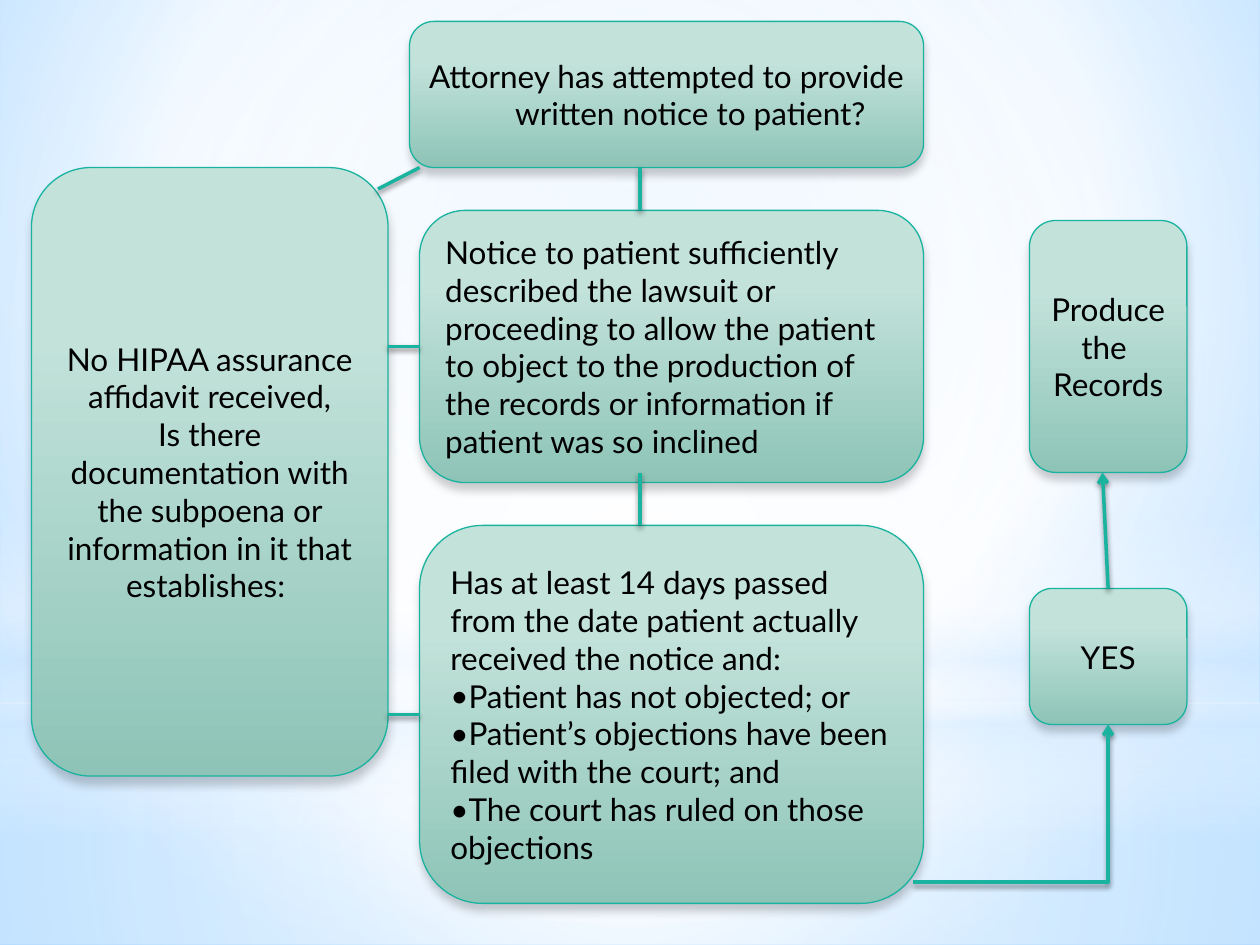
"""Build a flowchart slide on notice to patients before records are produced."""
from dataclasses import dataclass
from typing import Optional

import pptx
import pptx.dml.color
import pptx.enum.shapes
import pptx.enum.text
import pptx.oxml
import pptx.oxml.ns
import pptx.util
from pptx.util import Inches

COLORS = {
    "white": "FFFFFF", "ice": "D6ECFF", "sky": "C2E3FF", "blue": "79C1FF",
    "mint": "C2E2DA", "sage": "8EC4B7", "teal": "1AB39F", "black": "000000",
}
FONT = "Lato"
SHAPE = pptx.enum.shapes.MSO_SHAPE
ALIGN = pptx.enum.text.PP_ALIGN
qn = pptx.oxml.ns.qn
NS = pptx.oxml.ns.nsdecls("a")


@dataclass(frozen=True)
class Gradient:
    """Stops of (position, colour, opacity), linear unless focus is given."""
    stops: tuple
    focus: Optional[tuple] = None


@dataclass(frozen=True)
class Shadow:
    """A shadow falling straight down."""
    opacity: int
    blur: float
    distance: float


@dataclass(frozen=True)
class Panel:
    """A backdrop layer."""
    shape: int
    top: float
    height: float
    gradient: Gradient


@dataclass(frozen=True)
class Step:
    """A rounded box of the flowchart."""
    name: str
    box: tuple
    lines: tuple
    centred: bool = True
    hanging: float = 0
    margin: float = 0.1
    bulleted_from: Optional[int] = None


@dataclass(frozen=True)
class Link:
    """A connector, joined to (step, side) where it meets a midpoint."""
    start: tuple
    end: tuple
    begin_at: Optional[tuple] = None
    end_at: Optional[tuple] = None
    arrow: bool = False
    bent: bool = False


CENTRE = (50, 50, 50, 50)
FAINT = 2
BACKGROUND = Gradient(((0, "sky", 100), (60, "white", 100), (100, "blue", 100)), (20, 10, 20, 60))
BOX_FILL = Gradient(((28, "mint", 100), (100, "sage", 100)))
BOX_SHADOW = Shadow(20, 5, 4)
LINK_SHADOW = Shadow(45, 3.1, 1.8)

PANELS = (
    Panel(SHAPE.RECTANGLE, 5.58, 1.92,
          Gradient(((0, "white", 91), (37, "white", 76), (100, "ice", 79)), CENTRE)),
    Panel(SHAPE.RECTANGLE, 0, 5.58,
          Gradient(((0, "white", 89), (48, "white", 62), (100, "ice", 79)), CENTRE)),
    Panel(SHAPE.RECTANGLE, 4.12, 2.5,
          Gradient(((0, "white", FAINT), (29, "white", 30), (45, "ice", 40),
                    (55, "white", 26), (65, "ice", 60), (100, "white", FAINT)))),
    Panel(SHAPE.OVAL, 1.75, 5.58,
          Gradient(((0, "white", 100), (56, "white", FAINT)), CENTRE)),
)

STEPS = (
    Step("attempt", (3.25, 0.17, 4.08, 1.16),
         ("Attorney has attempted to provide written notice to patient?",),
         hanging=0.38, margin=0.08),
    Step("yes", (8.17, 4.67, 1.25, 1.08), ("YES",)),
    Step("produce", (8.17, 1.75, 1.25, 2), ("Produce ", "the ", "Records")),
    Step("question", (0.25, 1.33, 2.83, 4.83),
         ("No HIPAA assurance affidavit received,\vIs there documentation with the subpoena "
          "or information in it that establishes: ",)),
    Step("notice", (3.33, 1.67, 4, 2.16),
         ("Notice to patient sufficiently described the lawsuit or proceeding to allow the "
          "patient to object to the production of the records or information if patient was "
          "so inclined",), centred=False),
    Step("waiting", (3.33, 4.17, 4, 3),
         ("Has at least 14 days passed from the date patient actually received the notice and:",
          "Patient has not objected; or",
          "Patient’s objections have been filed with the court; and",
          "The court has ruled on those objections"), centred=False, bulleted_from=1),
)

LINKS = (
    Link((3, 1.5), (3.33, 1.33)),
    Link((3.33, 2.75), (3.08, 2.75), begin_at=("notice", 1)),
    Link((3.33, 5.67), (3.08, 5.67), begin_at=("waiting", 1)),
    Link((5.08, 1.33), (5.08, 1.67)),
    Link((5.08, 3.75), (5.08, 4.17)),
    Link((7.25, 7), (8.79, 5.75), end_at=("yes", 2), arrow=True, bent=True),
    Link((8.79, 4.67), (8.75, 3.75), begin_at=("yes", 0), arrow=True),
)


def rgb(name: str) -> pptx.dml.color.RGBColor:
    """Return a named colour."""
    return pptx.dml.color.RGBColor.from_string(COLORS[name])


def paint(fill, props, gradient: Gradient) -> None:
    """Give a fill, held by the element props, a gradient."""
    fill.solid()
    stops = "".join(
        f'<a:gs pos="{pos * 1000}"><a:srgbClr val="{COLORS[color]}">'
        f'<a:alpha val="{opacity * 1000}"/></a:srgbClr></a:gs>'
        for pos, color, opacity in gradient.stops)
    if gradient.focus:
        sides = " ".join(f'{k}="{v * 1000}"' for k, v in zip("ltrb", gradient.focus))
        course = f'<a:path path="circle"><a:fillToRect {sides}/></a:path>'
    else:
        course = '<a:lin ang="5400000" scaled="0"/>'
    xml = f'<a:gradFill {NS} rotWithShape="1"><a:gsLst>{stops}</a:gsLst>{course}</a:gradFill>'
    props.replace(props.find(qn("a:solidFill")), pptx.oxml.parse_xml(xml))


def cast_shadow(props, shadow: Shadow) -> None:
    """Append a shadow to shape properties."""
    blur, distance = (int(pptx.util.Pt(v)) for v in (shadow.blur, shadow.distance))
    props.append(pptx.oxml.parse_xml(
        f'<a:effectLst {NS}><a:outerShdw blurRad="{blur}" dist="{distance}" dir="5400000" '
        f'rotWithShape="0"><a:srgbClr val="{COLORS["black"]}">'
        f'<a:alpha val="{shadow.opacity * 1000}"/></a:srgbClr></a:outerShdw></a:effectLst>'))


def draw_panel(s, panel: Panel) -> None:
    """Draw a full-width backdrop layer."""
    sp = s.shapes.add_shape(panel.shape, 0, Inches(panel.top), Inches(10), Inches(panel.height))
    paint(sp.fill, sp.element.spPr, panel.gradient)
    sp.line.fill.background()
    sp.shadow.inherit = False


def draw_step(s, step: Step):
    """Draw a flowchart box with its text and return it."""
    sp = s.shapes.add_shape(SHAPE.FLOWCHART_ALTERNATE_PROCESS, *map(Inches, step.box))
    paint(sp.fill, sp.element.spPr, BOX_FILL)
    sp.line.color.rgb = rgb("teal")
    sp.line.width = pptx.util.Pt(0.75)
    cast_shadow(sp.element.spPr, BOX_SHADOW)
    tf = sp.text_frame
    tf.word_wrap = True
    tf.margin_left = tf.margin_right = Inches(step.margin)
    tf.vertical_anchor = pptx.enum.text.MSO_ANCHOR.MIDDLE
    tf.text = "\n".join(step.lines)
    for i, p in enumerate(tf.paragraphs):
        p.alignment = ALIGN.CENTER if step.centred else ALIGN.LEFT
        p.font.size, p.font.name = pptx.util.Pt(18), FONT
        p.font.color.rgb = rgb("black")
        pPr = p._p.get_or_add_pPr()
        if step.hanging:
            pPr.set("marL", str(Inches(step.hanging)))
            pPr.set("indent", str(Inches(-step.hanging)))
        if step.bulleted_from is not None and i >= step.bulleted_from:
            pPr.insert(0, pptx.oxml.parse_xml(f'<a:buFont {NS} typeface="{FONT}"/>'))
            pPr.insert(1, pptx.oxml.parse_xml(f'<a:buChar {NS} char="•"/>'))
    return sp


def draw_link(s, link: Link, boxes: dict) -> None:
    """Draw a connector between flowchart boxes."""
    kinds = pptx.enum.shapes.MSO_CONNECTOR
    kind = kinds.ELBOW if link.bent else kinds.STRAIGHT
    sp = s.shapes.add_connector(kind, *map(Inches, link.start + link.end))
    if link.begin_at:
        sp.begin_connect(boxes[link.begin_at[0]], link.begin_at[1])
    if link.end_at:
        sp.end_connect(boxes[link.end_at[0]], link.end_at[1])
    props = sp.element.spPr
    if link.bent:
        props.find(qn("a:prstGeom")).set("prst", "bentConnector2")
    sp.line.color.rgb = rgb("teal")
    sp.line.width = pptx.util.Pt(2)
    if link.arrow:
        props.find(qn("a:ln")).append(pptx.oxml.parse_xml(f'<a:tailEnd {NS} type="arrow"/>'))
    cast_shadow(props, LINK_SHADOW)


def main() -> None:
    """Build and save the slide."""
    prs = pptx.Presentation()
    prs.slide_width, prs.slide_height = Inches(10), Inches(7.5)
    s = prs.slides.add_slide(prs.slide_layouts[6])
    fill = s.background.fill
    fill.solid()
    paint(fill, s.element.find(".//" + qn("p:bgPr")), BACKGROUND)
    for panel in PANELS:
        draw_panel(s, panel)
    boxes = {step.name: draw_step(s, step) for step in STEPS}
    for link in LINKS:
        draw_link(s, link, boxes)
    prs.save("out.pptx")


if __name__ == "__main__":
    main()
